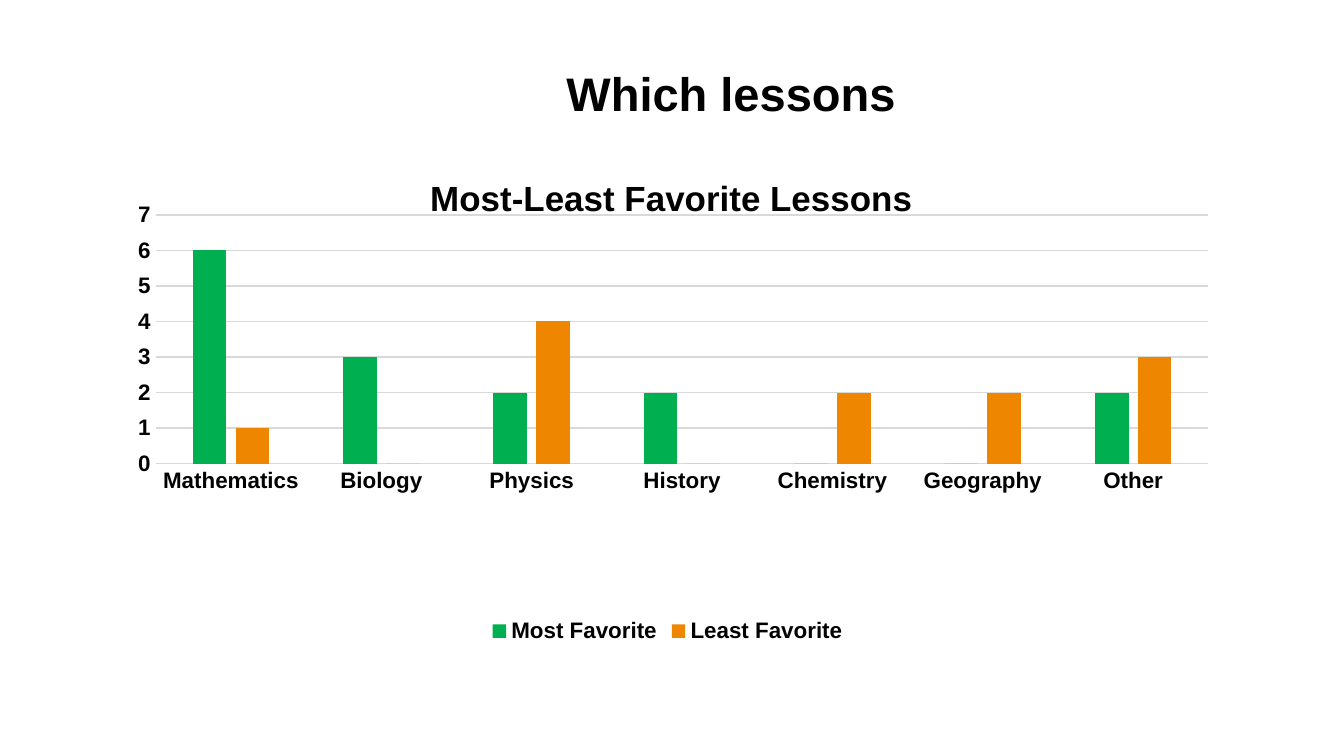
from dataclasses import dataclass

from lxml import etree
from pptx import Presentation
from pptx.chart.data import CategoryChartData
from pptx.dml.color import RGBColor
from pptx.enum.chart import XL_CHART_TYPE, XL_LEGEND_POSITION, XL_TICK_MARK
from pptx.enum.text import MSO_ANCHOR, PP_ALIGN
from pptx.oxml.ns import qn
from pptx.util import Pt

COLUMNS = XL_CHART_TYPE.COLUMN_CLUSTERED
BOTTOM = XL_LEGEND_POSITION.BOTTOM
NO_TICK = XL_TICK_MARK.NONE
MIDDLE = MSO_ANCHOR.MIDDLE
CENTER = PP_ALIGN.CENTER

PX = 4572  # 200 px to the inch


@dataclass(frozen=True)
class Theme:
    font: str = "Arial"
    ink: str = "000000"
    paper: str = "FFFFFF"
    grid: str = "D9D9D9"
    most: str = "00B050"
    least: str = "EF8600"
    title: float = 25.2
    head: float = 18.7
    label: float = 12
    line: float = 0.75


THEME = Theme()

LESSONS = ["Mathematics", "Biology", "Physics", "History",
           "Chemistry", "Geography", "Other"]
VOTES = [
    ("Most Favorite", [6, 3, 2, 2, 0, 0, 2], THEME.most),
    ("Least Favorite", [1, 0, 4, 0, 2, 2, 3], THEME.least),
]


def px(*sizes):
    return [size * PX for size in sizes]


def rgb(code):
    return RGBColor.from_string(code)


def style(font, size):
    font.name = THEME.font
    font.size = Pt(size)
    font.bold = True
    font.color.rgb = rgb(THEME.ink)


def rule(line):
    line.color.rgb = rgb(THEME.grid)
    line.width = Pt(THEME.line)


def place(node, index, **values):
    """Give a chart part a manual layout, in fractions of the chart."""
    for old in node.findall(qn("c:layout")):
        node.remove(old)
    layout = etree.Element(qn("c:layout"))
    manual = etree.SubElement(layout, qn("c:manualLayout"))
    for tag, value in values.items():
        etree.SubElement(manual, qn("c:" + tag)).set("val", str(value))
    node.insert(index, layout)


def add_title(slide, text, box):
    title = slide.shapes.title
    title.left, title.top, title.width, title.height = px(*box)
    frame = title.text_frame
    frame.text = text
    frame.word_wrap = True
    frame.vertical_anchor = MIDDLE
    para = frame.paragraphs[0]
    para.alignment = CENTER
    style(para.font, THEME.title)


def set_axes(chart):
    for axis in (chart.category_axis, chart.value_axis):
        axis.major_tick_mark = axis.minor_tick_mark = NO_TICK
        style(axis.tick_labels.font, THEME.label)
    rule(chart.category_axis.format.line)
    axis = chart.value_axis
    axis.minimum_scale, axis.maximum_scale, axis.major_unit = 0, 7, 1
    axis.format.line.fill.background()
    axis.has_major_gridlines = True
    rule(axis.major_gridlines.format.line)


def add_chart(slide, head, box):
    data = CategoryChartData()
    data.categories = LESSONS
    for name, votes, _ in VOTES:
        data.add_series(name, votes)
    chart = slide.shapes.add_chart(COLUMNS, *px(*box), data).chart
    style(chart.font, THEME.label)

    # Heading
    chart.has_title = True
    frame = chart.chart_title.text_frame
    frame.text = head
    style(frame.paragraphs[0].font, THEME.head)
    place(chart.chart_title._element, 1,
          xMode="edge", yMode="edge", x=0.29, y=0.04)

    # Columns
    plot = chart.plots[0]
    plot.gap_width, plot.overlap = 219, -27
    plot.vary_by_categories = False
    for series, (_, _, color) in zip(plot.series, VOTES):
        series.format.fill.solid()
        series.format.fill.fore_color.rgb = rgb(color)
    area = chart._chartSpace.find(".//" + qn("c:plotArea"))
    place(area, 0, layoutTarget="inner", xMode="edge", yMode="edge",
          x=0.059, y=0.132, w=0.907, h=0.498)
    set_axes(chart)

    # Legend
    chart.has_legend = True
    chart.legend.position = BOTTOM
    chart.legend.include_in_layout = False
    style(chart.legend.font, THEME.label)


def main():
    deck = Presentation()
    deck.slide_width, deck.slide_height = px(2000, 1125)
    slide = deck.slides.add_slide(deck.slide_layouts[5])
    slide.background.fill.solid()
    slide.background.fill.fore_color.rgb = rgb(THEME.paper)
    add_title(slide, "Which lessons", (268, 75, 1640, 126))
    add_chart(slide, "Most-Least Favorite Lessons", (130, 222, 1727, 743))
    deck.save("out.pptx")


if __name__ == "__main__":
    main()
